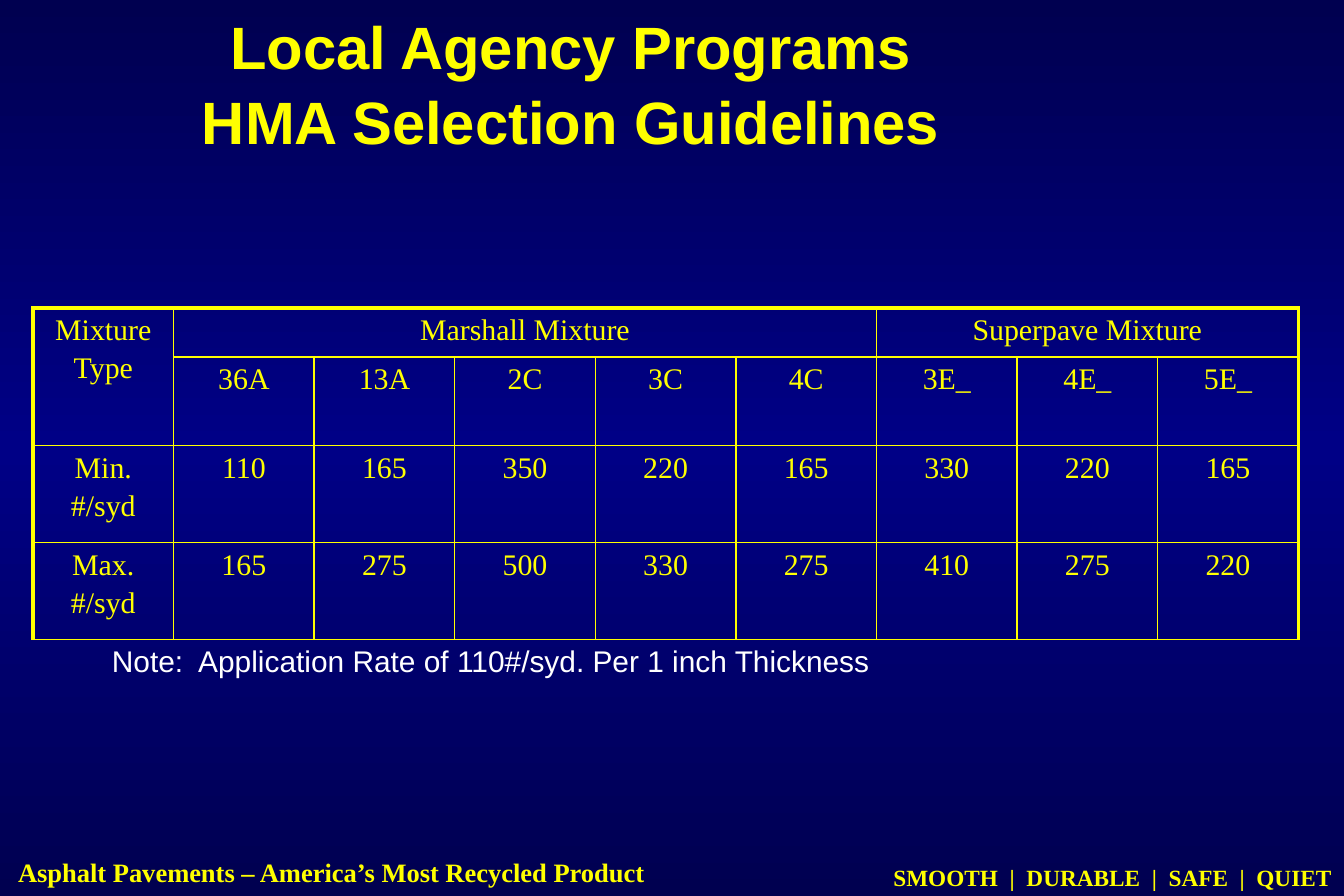
from copy import deepcopy

from pptx import Presentation
from pptx.dml.color import RGBColor
from pptx.enum.text import PP_ALIGN
from pptx.oxml import parse_xml
from pptx.oxml.ns import nsdecls
from pptx.util import Inches, Pt

LEFT, CENTER, RIGHT = PP_ALIGN.LEFT, PP_ALIGN.CENTER, PP_ALIGN.RIGHT
YELLOW, WHITE = "FFFF00", "FFFFFF"
SANS, SERIF = "Arial", "Times New Roman"
SLIDE_W, SLIDE_H = 1344, 896
SCALE = Inches(11.25) / SLIDE_W

BACKGROUND = [(0, "000050"), (0.5, "000086"), (1, "000050")]
TITLE = "Local Agency Programs\vHMA Selection Guidelines"
NOTE = "Note:  Application Rate of 110#/syd. Per 1 inch Thickness"
SLOGAN = "Asphalt Pavements – America’s Most Recycled Product"
VALUES = "SMOOTH  |  DURABLE  |  SAFE  |  QUIET"
MIXTURES = [
    ["Mixture\nType", "Marshall Mixture", "", "", "", "", "Superpave Mixture", "", ""],
    ["", "36A", "13A", "2C", "3C", "4C", "3E_", "4E_", "5E_"],
    ["Min.\n#/syd", "110", "165", "350", "220", "165", "330", "220", "165"],
    ["Max.\n#/syd", "165", "275", "500", "330", "275", "410", "275", "220"],
]
MERGES = [((0, 0), (1, 0)), ((0, 1), (0, 5)), ((0, 6), (0, 8))]
TABLE_LEFT, TABLE_TOP, COLUMN_W = 33, 308, 140.6
ROW_HEIGHTS = [49, 84, 97, 97]
THIN, THICK = Pt(1), Pt(2.25)


def px(length):
    return round(length * SCALE)


def color(hex_string):
    return RGBColor.from_string(hex_string)


def write(frame, text, size, font=SERIF, fill=YELLOW, bold=False, align=CENTER,
          gap=0, spacing=None, insets=(12, 6, 12, 6)):
    frame.word_wrap = True
    (frame.margin_left, frame.margin_top,
     frame.margin_right, frame.margin_bottom) = map(px, insets)
    for index, line in enumerate(text.split("\n")):
        paragraph = frame.add_paragraph() if index else frame.paragraphs[0]
        paragraph.text = line
        paragraph.alignment = align
        if index:
            paragraph.space_before = Pt(gap)
        if spacing:
            paragraph.line_spacing = spacing
        paragraph.font.size = Pt(size)
        for run in paragraph.runs:
            run.font.name = font
            run.font.size = Pt(size)
            run.font.bold = bold
            run.font.color.rgb = color(fill)


def add_text(slide, box, text, size, **style):
    write(slide.shapes.add_textbox(*map(px, box)).text_frame, text, size, **style)


def paint_background(slide):
    fill = slide.background.fill
    fill.gradient()
    fill.gradient_angle = 90
    stops = slide.element.xpath(".//a:gsLst")[0]
    stops.append(deepcopy(stops[0]))
    for stop, (position, shade) in zip(fill.gradient_stops, BACKGROUND):
        stop.position = position
        stop.color.rgb = color(shade)


def add_borders(cell, widths):
    properties = cell._tc.get_or_add_tcPr()
    for index, (side, width) in enumerate(widths.items()):
        properties.insert(index, parse_xml(
            f'<a:ln{side} {nsdecls("a")} w="{width}"><a:solidFill>'
            f'<a:srgbClr val="{YELLOW}"/></a:solidFill></a:ln{side}>'))


def add_mixture_table(slide):
    columns = len(MIXTURES[0])
    table = slide.shapes.add_table(
        len(MIXTURES), columns, px(TABLE_LEFT), px(TABLE_TOP),
        px(COLUMN_W * columns), px(sum(ROW_HEIGHTS))).table
    table.first_row = table.horz_banding = False
    for column in table.columns:
        column.width = px(COLUMN_W)
    for row, height in zip(table.rows, ROW_HEIGHTS):
        row.height = px(height)
    for r, labels in enumerate(MIXTURES):
        for c, label in enumerate(labels):
            cell = table.cell(r, c)
            write(cell.text_frame, label, 18, gap=3)
            cell.margin_left = cell.margin_right = px(13)
            cell.margin_top = cell.margin_bottom = px(6)
            cell.fill.background()
            add_borders(cell, {
                "L": THIN if c else THICK,
                "R": THICK if c == columns - 1 else THIN,
                "T": THIN if r else THICK,
                "B": THIN,
            })
    for first, last in MERGES:
        table.cell(*first).merge(table.cell(*last))
    for c in (1, 6):
        add_right = table.cell(0, c)._tc.tcPr.xpath("a:lnR")[0]
        add_right.set("w", str(THICK if c == 6 else THIN))


def main():
    deck = Presentation()
    deck.slide_width, deck.slide_height = px(SLIDE_W), px(SLIDE_H)
    slide = deck.slides.add_slide(deck.slide_layouts[6])
    paint_background(slide)
    add_text(slide, (0, 850, 762, 44), SLOGAN, 16, bold=True, align=LEFT,
             insets=(18, 6, 12, 6))
    add_text(slide, (861, 857, 483, 40), VALUES, 14, bold=True, align=RIGHT)
    add_text(slide, (0, -4, 1142, 150), TITLE, 36, font=SANS, bold=True,
             spacing=1.05, insets=(12, 10, 12, 6))
    add_mixture_table(slide)
    add_text(slide, (100, 637, 1142, 99), NOTE, 18, font=SANS, fill=WHITE, align=LEFT)
    deck.save("out.pptx")


if __name__ == "__main__":
    main()
